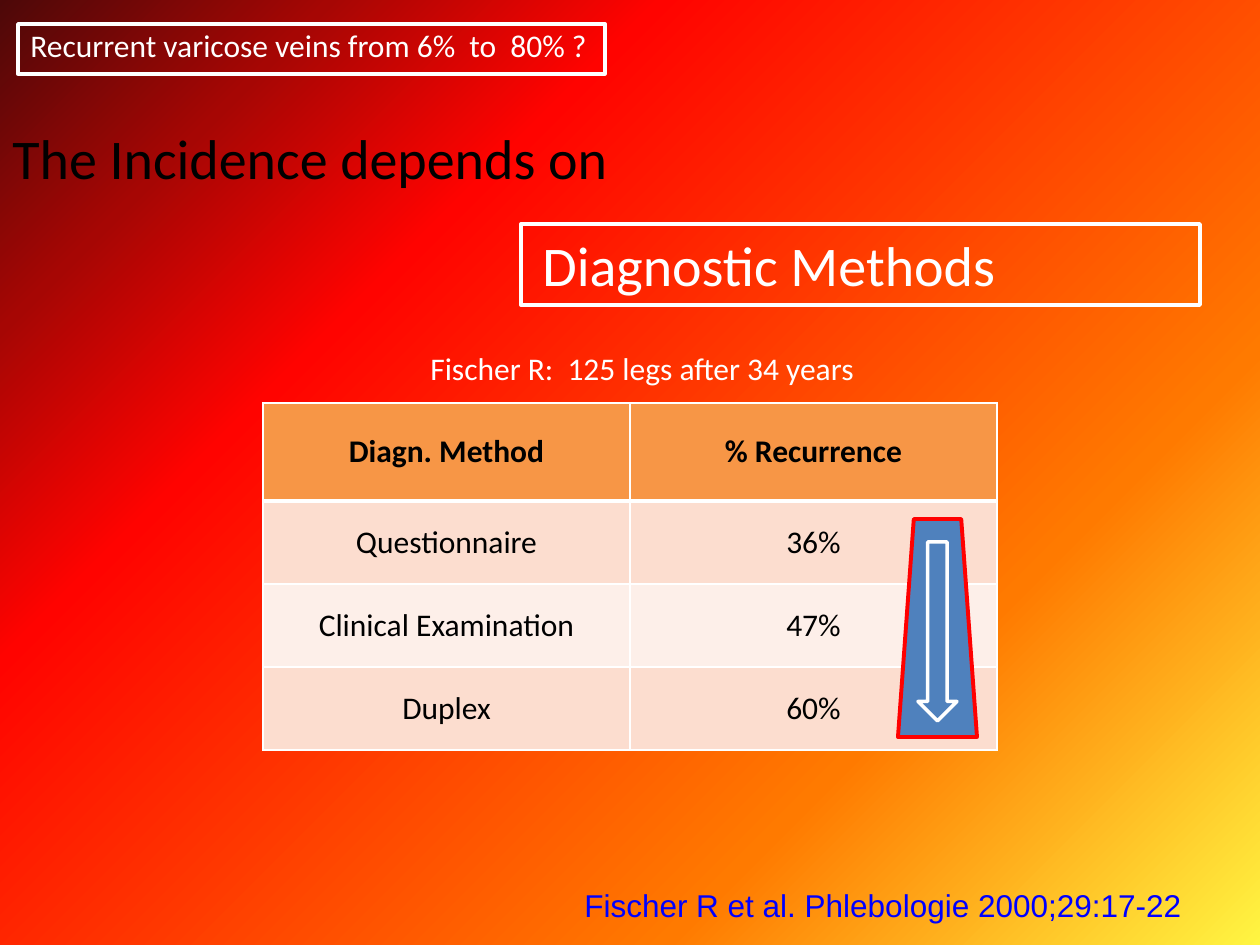
from lxml import etree
from pptx import Presentation
from pptx.dml.color import RGBColor
from pptx.enum.shapes import MSO_SHAPE as Shape
from pptx.enum.text import MSO_ANCHOR as Anchor, PP_ALIGN as Align
from pptx.oxml import parse_xml
from pptx.oxml.ns import nsdecls, qn
from pptx.util import Emu, Pt

PX_PER_INCH = 126
WHITE, BLACK, RED, BLUE = "FFFFFF", "000000", "FF0000", "0000FF"
HEADER, BAND_DARK, BAND_LIGHT = "F79646", "FCDDCF", "FDEFE9"
GRADIENT = [(0, "FFF542"), (27, "FF7A00"), (70, "FF0300"), (85, "A60604"), (100, "4D0808")]
RECURRENCE = [
    ("Diagn. Method", "% Recurrence"),
    ("Questionnaire", "36%"),
    ("Clinical Examination", "47%"),
    ("Duplex", "60%"),
]


def px(length):
    return Emu(round(length * 914400 / PX_PER_INCH))


def color(value):
    return RGBColor.from_string(value)


class SlideBuilder:
    font = "Calibri"
    size = 18

    def __init__(self, presentation):
        self.slide = presentation.slides.add_slide(presentation.slide_layouts[6])

    def background(self, stops, angle):
        stop_xml = "".join(
            f'<a:gs pos="{position * 1000}"><a:srgbClr val="{value}"/></a:gs>'
            for position, value in stops
        )
        background = parse_xml(
            f'<p:bg {nsdecls("p", "a")}><p:bgPr><a:gradFill rotWithShape="1">'
            f'<a:gsLst>{stop_xml}</a:gsLst><a:lin ang="{angle * 60000}" scaled="0"/>'
            "</a:gradFill><a:effectLst/></p:bgPr></p:bg>"
        )
        self.slide.element.cSld.insert(0, background)

    def format_runs(self, paragraph, value, size=None, font=None, bold=False):
        for run in paragraph.runs:
            run.font.name = font or self.font
            run.font.size = Pt(size or self.size)
            run.font.bold = bold
            run.font.color.rgb = color(value)

    def text(self, text, left, top, width, height, value=WHITE, size=None, font=None):
        box = self.slide.shapes.add_textbox(px(left), px(top), px(width), px(height))
        box.text_frame.word_wrap = True
        box.text_frame.text = text
        self.format_runs(box.text_frame.paragraphs[0], value, size, font)

    def shape(self, kind, left, top, width, height, line, line_width, fill=None, rotation=0):
        shape = self.slide.shapes.add_shape(kind, px(left), px(top), px(width), px(height))
        shape.shadow.inherit = False
        shape.rotation = rotation
        if fill:
            shape.fill.solid()
            shape.fill.fore_color.rgb = color(fill)
        else:
            shape.fill.background()
        shape.line.color.rgb = color(line)
        shape.line.width = Pt(line_width)

    def cell_border(self, cell, side, width):
        properties = cell._tc.get_or_add_tcPr()
        line = etree.SubElement(properties, qn(f"a:ln{side}"), w=str(Pt(width)))
        fill = etree.SubElement(line, qn("a:solidFill"))
        etree.SubElement(fill, qn("a:srgbClr"), val=WHITE)

    def table(self, rows, left, top, column_width, header_height, row_height):
        columns = len(rows[0])
        height = header_height + row_height * (len(rows) - 1)
        table = self.slide.shapes.add_table(
            len(rows), columns, px(left), px(top), px(column_width * columns), px(height)
        ).table
        for column in table.columns:
            column.width = px(column_width)
        for row_index, row in enumerate(rows):
            is_header = row_index == 0
            table.rows[row_index].height = px(header_height if is_header else row_height)
            band = BAND_DARK if row_index % 2 else BAND_LIGHT
            for column_index, text in enumerate(row):
                cell = table.cell(row_index, column_index)
                cell.text = text
                cell.vertical_anchor = Anchor.MIDDLE
                for side in "LRTB":
                    thick = (is_header and side == "B") or (row_index == 1 and side == "T")
                    self.cell_border(cell, side, 3 if thick else 1)
                cell.fill.solid()
                cell.fill.fore_color.rgb = color(HEADER if is_header else band)
                paragraph = cell.text_frame.paragraphs[0]
                paragraph.alignment = Align.CENTER
                self.format_runs(paragraph, BLACK, bold=is_header)


def main():
    presentation = Presentation()
    presentation.slide_width, presentation.slide_height = px(1260), px(945)
    builder = SlideBuilder(presentation)
    builder.background(GRADIENT, 225)

    builder.shape(Shape.RECTANGLE, 18, 24, 587, 50, WHITE, 2)
    builder.text("Recurrent varicose veins from 6%  to  80% ?", 18, 20, 588, 51)
    builder.text("The Incidence depends on", 0, 117, 842, 81, BLACK, 32)
    builder.text("Diagnostic Methods", 530, 224, 669, 81, size=32)
    builder.shape(Shape.RECTANGLE, 521, 224, 679, 81, WHITE, 2.25)

    builder.table(RECURRENCE, 263, 403, 367, 98, 83)
    builder.shape(Shape.FLOWCHART_MANUAL_OPERATION, 898, 519, 79, 218, RED, 2.25, "4F81BD", 180)
    builder.shape(Shape.DOWN_ARROW, 918, 542, 39, 179, WHITE, 2, "4F81BD")

    builder.text("Fischer R et al. Phlebologie 2000;29:17-22", 572, 880, 628, 51, BLUE, font="Arial")
    builder.text("Fischer R:  125 legs after 34 years", 418, 343, 456, 51)
    presentation.save("out.pptx")


if __name__ == "__main__":
    main()
